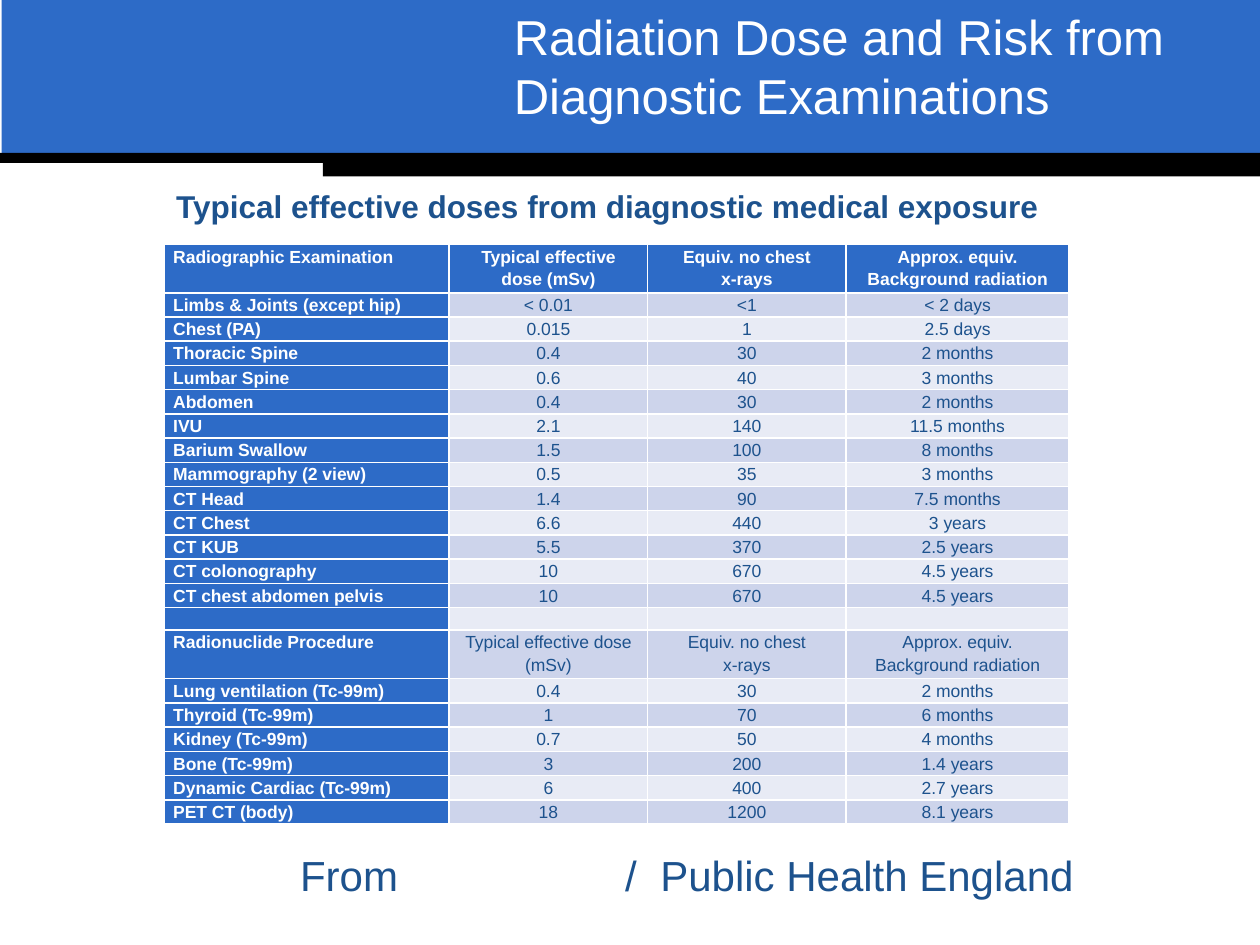
from dataclasses import dataclass

from lxml import etree
from pptx import Presentation
from pptx.dml.color import RGBColor
from pptx.enum import shapes, text
from pptx.oxml.ns import qn
from pptx.util import Emu, Inches, Pt

COLUMNS, ROWS = 100, 75
CELL = Inches(10) // COLUMNS


@dataclass(frozen=True)
class Theme:
    font: str = "Arial"
    blue: str = "2D6BC7"
    ink: str = "1D528D"
    white: str = "FFFFFF"
    black: str = "000000"
    odd_band: str = "CDD4EB"
    even_band: str = "E8EBF5"
    title: int = 28
    source: int = 24
    heading: int = 18
    body: int = 10


@dataclass(frozen=True)
class Box:
    left: float
    top: float
    width: float
    height: float

    def inner(self, left, top, width, height):
        return Box(self.left + left, self.top + top, width, height)

    def lengths(self):
        return [grid(value) for value in (self.left, self.top, self.width, self.height)]


THEME = Theme()
COLUMN_WIDTHS = (22.65, 15.75, 15.75, 17.7)
LINE_ROW, DOUBLE_ROW, HEADER_ROW, TALL_ROW = 1.79, 3.58, 3.7, 1.95
TALL_ROWS = {0: HEADER_ROW, 15: DOUBLE_ROW, 16: TALL_ROW}
DOSES = [
    ("Radiographic Examination", "Typical effective dose (mSv)",
     "Equiv. no chest\vx-rays", "Approx. equiv. Background radiation"),
    ("Limbs & Joints (except hip)", "< 0.01", "<1", "< 2 days"),
    ("Chest (PA)", "0.015", "1", "2.5 days"),
    ("Thoracic Spine", "0.4", "30", "2 months"),
    ("Lumbar Spine", "0.6", "40", "3 months"),
    ("Abdomen", "0.4", "30", "2 months"),
    ("IVU", "2.1", "140", "11.5 months"),
    ("Barium Swallow", "1.5", "100", "8 months"),
    ("Mammography (2 view)", "0.5", "35", "3 months"),
    ("CT Head", "1.4", "90", "7.5 months"),
    ("CT Chest", "6.6", "440", "3 years"),
    ("CT KUB", "5.5", "370", "2.5 years"),
    ("CT colonography", "10", "670", "4.5 years"),
    ("CT chest abdomen pelvis", "10", "670", "4.5 years"),
    ("", "", "", ""),
    ("Radionuclide Procedure", "Typical effective dose (mSv)",
     "Equiv. no chest\vx-rays", "Approx. equiv. Background radiation"),
    ("Lung ventilation (Tc-99m)", "0.4", "30", "2 months"),
    ("Thyroid (Tc-99m)", "1", "70", "6 months"),
    ("Kidney (Tc-99m)", "0.7", "50", "4 months"),
    ("Bone (Tc-99m)", "3", "200", "1.4 years"),
    ("Dynamic Cardiac (Tc-99m)", "6", "400", "2.7 years"),
    ("PET CT (body)", "18", "1200", "8.1 years"),
]


def grid(value):
    return Emu(round(value * CELL))


def style(paragraph, size, color, bold=False):
    font = paragraph.font
    font.name, font.size, font.bold = THEME.font, Pt(size), bold
    font.color.rgb = RGBColor.from_string(color)


def add_bar(slide, box, color):
    shape = slide.shapes.add_shape(shapes.MSO_SHAPE.RECTANGLE, *box.lengths())
    shape.shadow.inherit = False
    shape.fill.solid()
    shape.fill.fore_color.rgb = RGBColor.from_string(color)
    shape.line.fill.background()


def add_label(slide, box, words, size, color, bold=False, tab=None):
    frame = slide.shapes.add_textbox(*box.lengths()).text_frame
    frame.word_wrap = True
    frame.vertical_anchor = text.MSO_ANCHOR.MIDDLE
    paragraph = frame.paragraphs[0]
    paragraph.text = words
    if tab:
        stops = etree.SubElement(paragraph._p.get_or_add_pPr(), qn("a:tabLst"))
        etree.SubElement(stops, qn("a:tab"), pos=str(grid(tab)), algn="l")
    style(paragraph, size, color, bold)


def add_banner(slide, box):
    add_bar(slide, box.inner(0.13, -0.1, box.width - 0.13, 12.3), THEME.blue)
    add_bar(slide, box.inner(0, 12.13, box.width, 0.8), THEME.black)
    add_bar(slide, box.inner(25.63, 12.4, box.width - 25.63, 1.6), THEME.black)
    add_label(slide, box.inner(39.8, 0, 56.6, 10.4),
              "Radiation Dose and Risk from Diagnostic Examinations",
              THEME.title, THEME.white)


def fill_cell(cell, words, row, column):
    heading = row == 0 or column == 0
    band = THEME.odd_band if row % 2 else THEME.even_band
    cell.fill.solid()
    cell.fill.fore_color.rgb = RGBColor.from_string(THEME.blue if heading else band)
    cell.margin_left = cell.margin_right = grid(0.75)
    cell.margin_top = cell.margin_bottom = 0
    paragraph = cell.text_frame.paragraphs[0]
    paragraph.line_spacing = 1.15
    paragraph.alignment = text.PP_ALIGN.CENTER if column else text.PP_ALIGN.LEFT
    if words:
        paragraph.text = words
    else:
        etree.SubElement(paragraph._p, qn("a:endParaRPr"), sz=str(THEME.body * 100))
    style(paragraph, THEME.body, THEME.white if heading else THEME.ink, heading)


def add_dose_table(slide, box):
    table = slide.shapes.add_table(len(DOSES), len(COLUMN_WIDTHS), *box.lengths()).table
    table.first_col = True
    for column, width in zip(table.columns, COLUMN_WIDTHS):
        column.width = grid(width)
    for row, values in enumerate(DOSES):
        table.rows[row].height = grid(TALL_ROWS.get(row, LINE_ROW))
        for column, words in enumerate(values):
            fill_cell(table.cell(row, column), words, row, column)


def add_dose_region(slide, box):
    add_label(slide, box.inner(0, 0.08, box.width, 4),
              "Typical effective doses from diagnostic medical exposure",
              THEME.heading, THEME.ink, bold=True)
    add_dose_table(slide, box.inner(0, 5.1, sum(COLUMN_WIDTHS), 43))


def add_source_line(slide, box):
    add_label(slide, box.inner(25.8, 0, 41.7, 5), "/\tPublic Health England",
              THEME.source, THEME.ink, tab=2.8)
    add_label(slide, box.inner(0, 0, 9.8, 5), "From", THEME.source, THEME.ink)


def main():
    presentation = Presentation()
    presentation.slide_width, presentation.slide_height = grid(COLUMNS), grid(ROWS)
    slide = presentation.slides.add_slide(presentation.slide_layouts[6])
    add_banner(slide, Box(0, 0, COLUMNS, 14))
    add_dose_region(slide, Box(13, 14.3, 77.2, 48.2))
    add_source_line(slide, Box(22.83, 66.93, 67.5, 5))
    presentation.save("out.pptx")


if __name__ == "__main__":
    main()
